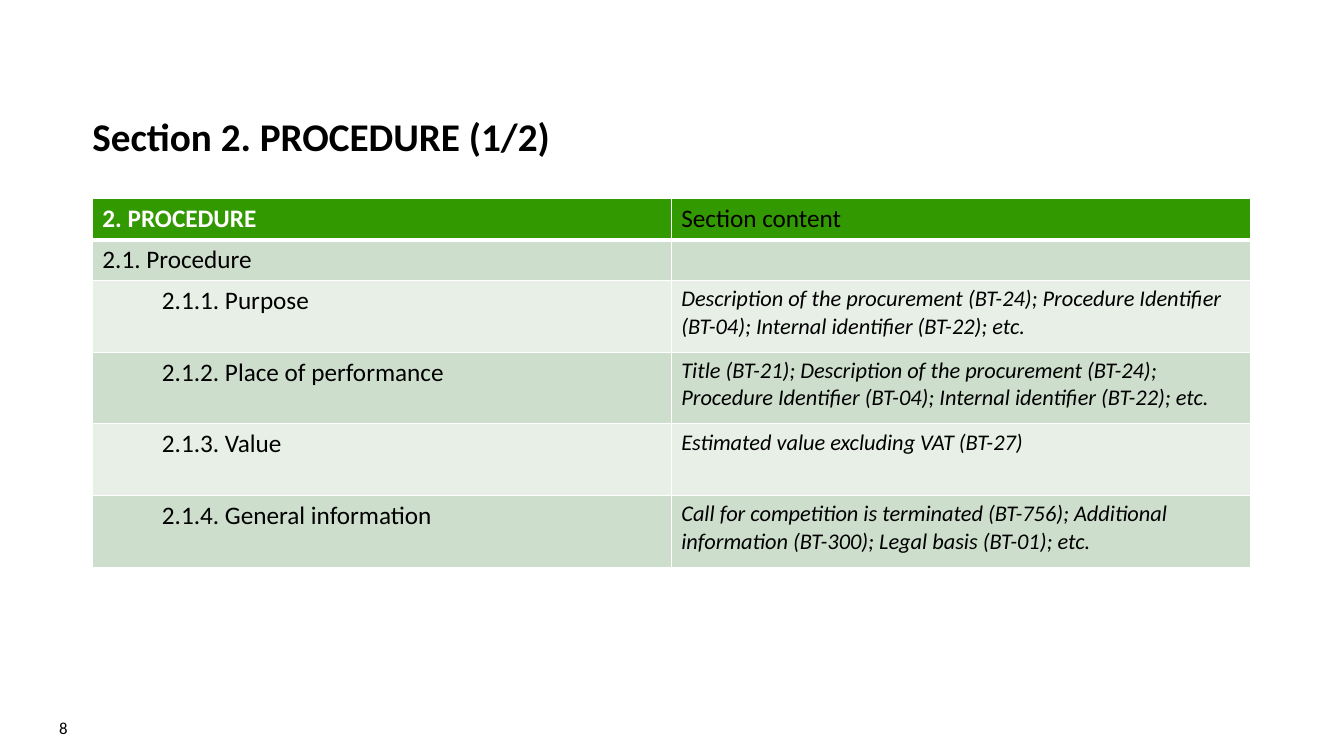
from lxml.etree import SubElement
from pptx import Presentation
from pptx.dml.color import RGBColor
from pptx.enum.text import MSO_ANCHOR as Anchor, PP_ALIGN as Align
from pptx.oxml.ns import qn
from pptx.util import Pt

BLACK = RGBColor(0x00, 0x00, 0x00)
WHITE = RGBColor(0xFF, 0xFF, 0xFF)
GREEN = RGBColor(0x33, 0x99, 0x00)
SAGE = RGBColor(0xCE, 0xDE, 0xCC)
PALE = RGBColor(0xE8, 0xEF, 0xE7)

HEADS = ("2. PROCEDURE", "Section content")
GROUP = "2.1. Procedure"
PARTS = [
    ("2.1.1. Purpose",
     "Description of the procurement (BT-24); Procedure Identifier (BT-04); "
     "Internal identifier (BT-22); etc."),
    ("2.1.2. Place of performance",
     "Title (BT-21); Description of the procurement (BT-24); "
     "Procedure Identifier (BT-04); Internal identifier (BT-22); etc."),
    ("2.1.3. Value", "Estimated value excluding VAT (BT-27)"),
    ("2.1.4. General information",
     "Call for competition is terminated (BT-756); Additional information "
     "(BT-300); Legal basis (BT-01); etc."),
]


def write(frame, text, size=18, color=BLACK, bold=False, italic=False,
          align=Align.LEFT, indent=0, spacing=None):
    para = frame.paragraphs[0]
    para.alignment = align
    para.line_spacing = spacing
    if indent:
        props = para._p.get_or_add_pPr()
        props.set("marL", str(Pt(indent)))
        props.set("indent", "0")
    para.font.size = Pt(size)
    run = para.add_run()
    run.text = text
    font = run.font
    font.name, font.size = "Calibri", Pt(size)
    font.bold, font.italic = bold, italic
    font.color.rgb = color


def add_box(slide, box, anchor, text, insets=(7.2, 3.6, 7.2, 3.6), **style):
    frame = slide.shapes.add_textbox(*map(Pt, box)).text_frame
    frame.word_wrap = True
    frame.vertical_anchor = anchor
    (frame.margin_left, frame.margin_top,
     frame.margin_right, frame.margin_bottom) = map(Pt, insets)
    write(frame, text, **style)


def edge(cell, side, width):
    """Draw one white border; call before the cell is filled."""
    line = SubElement(cell._tc.get_or_add_tcPr(), qn("a:ln" + side),
                      w=str(Pt(width)))
    fill = SubElement(line, qn("a:solidFill"))
    SubElement(fill, qn("a:srgbClr"), val=str(WHITE))


def add_grid(slide, box):
    left, top, width, height = box
    count = len(PARTS) + 2
    table = slide.shapes.add_table(count, 2, *map(Pt, box)).table
    for col in table.columns:
        col.width = Pt(width / 2)
    short = 29.2
    tall = (height - 2 * short) / len(PARTS)
    for i, row in enumerate(table.rows):
        row.height = Pt(short if i < 2 else tall)
        for cell in row.cells:
            for side in "LRTB":
                thick = (i, side) in ((0, "B"), (1, "T"))
                edge(cell, side, 3 if thick else 1)
            cell.fill.solid()
            cell.fill.fore_color.rgb = GREEN if i == 0 else (PALE, SAGE)[i % 2]

    write(table.cell(0, 0).text_frame, HEADS[0], color=WHITE, bold=True)
    write(table.cell(0, 1).text_frame, HEADS[1])
    write(table.cell(1, 0).text_frame, GROUP)
    table.cell(1, 1).text_frame.paragraphs[0].font.size = Pt(18)
    for i, (name, content) in enumerate(PARTS, 2):
        write(table.cell(i, 0).text_frame, name, indent=42.5)
        write(table.cell(i, 1).text_frame, content, size=16, italic=True)


def main():
    deck = Presentation()
    deck.slide_width, deck.slide_height = Pt(960), Pt(540)
    slide = deck.slides.add_slide(deck.slide_layouts[6])
    add_box(slide, (66, 10, 827, 104.5), Anchor.BOTTOM,
            "Section 2. PROCEDURE (1/2)", insets=(0, 3.6, 0, 0),
            size=28, bold=True, spacing=0.9)
    add_grid(slide, (66, 142, 827, 263.2))
    add_box(slide, (0, 505.5, 55.5, 28.8), Anchor.MIDDLE, "8",
            size=12, align=Align.RIGHT)
    deck.save("out.pptx")


if __name__ == "__main__":
    main()
